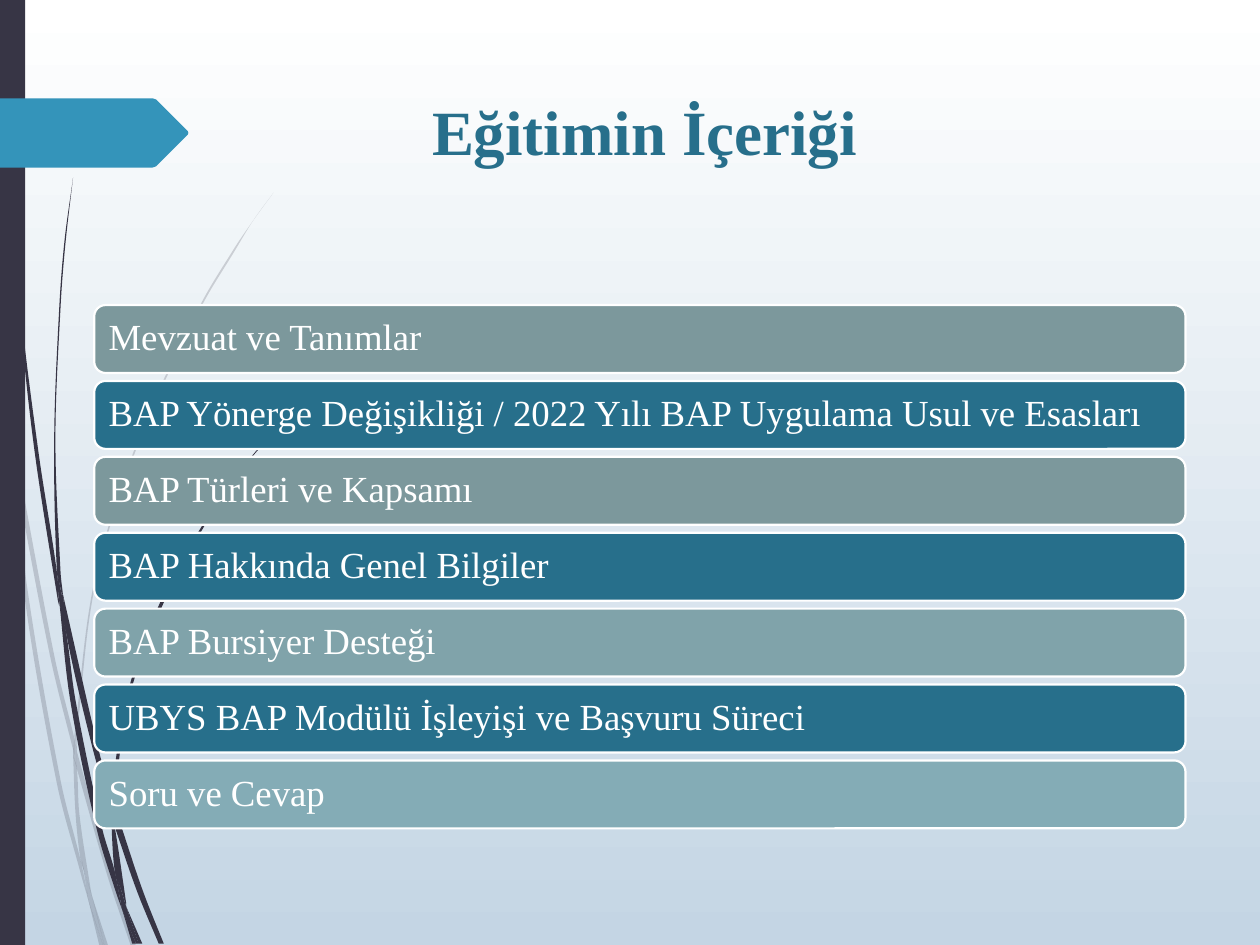
from dataclasses import dataclass
from math import dist

from lxml import etree
from pptx import Presentation
from pptx.dml.color import RGBColor
from pptx.enum.shapes import MSO_SHAPE
from pptx.enum.text import MSO_ANCHOR, PP_ALIGN
from pptx.oxml.ns import qn
from pptx.util import Cm, Pt

RECTANGLE = MSO_SHAPE.RECTANGLE
ROUNDED = MSO_SHAPE.ROUNDED_RECTANGLE
MIDDLE = MSO_ANCHOR.MIDDLE
LEFT = PP_ALIGN.LEFT
CENTER = PP_ALIGN.CENTER

COLORS = {
    "white": "FFFFFF", "mist": "C4D5E4", "ink": "373545",
    "tag": "3494BA", "blue": "276F8B",
    "slate": "7C989C", "sage": "80A3AA", "aqua": "84ACB6",
}
FONT = "Times New Roman"
GRID = Cm(0.0254)
DETAIL = 10
BAR_PITCH = 1.53

Points = list[tuple[float, float]]


@dataclass
class Blade:
    left: Points
    right: Points


@dataclass
class Topic:
    text: str
    color: str


PALE_BLADES = [
    Blade([(0, 299), (7, 344), (8, 350)], [(0, 282), (6, 322), (8, 350)]),
    Blade([(12, 376), (40, 522), (59, 599)], [(10, 345), (43, 520), (59, 586)]),
    Blade([(61, 610), (85, 694), (104, 751)], [(61, 596), (64, 607), (88, 692), (108, 751)]),
    Blade([(73, 711), (83, 751)], [(73, 711), (86, 751)]),
    Blade([(8, 350), (19, 470), (45, 621), (64, 693), (70, 714)],
          [(8, 350), (12, 376), (22, 469), (48, 619), (64, 683), (69, 707), (70, 714)]),
    Blade([(58, 599), (60, 646), (64, 683), (67, 692), (73, 711)],
          [(58, 599), (61, 610), (63, 646), (72, 706), (73, 711)]),
    Blade([(217, 153), (201, 175), (186, 197), (158, 244), (110, 348), (75, 461), (59, 584)],
          [(217, 153), (201, 175), (187, 198), (159, 245), (111, 349), (76, 462), (61, 584),
           (61, 596)]),
    Blade([(70, 714), (79, 751)], [(70, 714), (82, 751)]),
    Blade([(59, 586), (58, 599)], [(59, 586), (61, 596), (61, 610)]),
    Blade([(65, 683), (69, 707), (70, 714), (82, 751)],
          [(65, 683), (67, 692), (73, 711), (83, 751)]),
]
DARK_BLADES = [
    Blade([(2, 0), (3, 48), (5, 110), (14, 233), (27, 355), (46, 477), (47, 481)],
          [(3, 0), (4, 48), (6, 109), (15, 232), (30, 355), (45, 453), (47, 481)]),
    Blade([(50, 472), (53, 505), (73, 592), (88, 645)], [(50, 472), (77, 590), (88, 631)]),
    Blade([(91, 656), (109, 708), (126, 749)], [(91, 641), (94, 649), (113, 706), (130, 749)]),
    Blade([(47, 477), (56, 557), (77, 659), (92, 708), (97, 722)],
          [(47, 477), (53, 505), (60, 556), (81, 657), (91, 691), (96, 717), (97, 722)]),
    Blade([(58, 141), (51, 193), (47, 245), (43, 349), (45, 449), (49, 472)],
          [(58, 141), (52, 193), (48, 245), (44, 349), (48, 453), (50, 472)]),
    Blade([(100, 719), (110, 749)], [(100, 719), (113, 749)]),
    Blade([(45, 449), (47, 477), (53, 505)], [(45, 449), (49, 472), (50, 472), (53, 505)]),
    Blade([(215, 344), (191, 373), (168, 405), (129, 474), (101, 551), (88, 631)],
          [(216, 344), (191, 374), (169, 406), (131, 476), (103, 552), (91, 633), (91, 641)]),
    Blade([(97, 722), (105, 749)], [(97, 722), (108, 749)]),
    Blade([(88, 645), (91, 691), (96, 706), (100, 719)],
          [(88, 645), (91, 656), (100, 716), (100, 719)]),
    Blade([(91, 691), (96, 717), (97, 722), (108, 749)],
          [(91, 691), (96, 706), (100, 719), (110, 749)]),
]
TAG = [(0, 78), (121, 78), (124, 79), (149, 104), (149.5, 105.5), (149, 107),
       (124, 132), (121, 133), (0, 133)]
TOPICS = [
    Topic("Mevzuat ve Tanımlar", "slate"),
    Topic("BAP Yönerge Değişikliği / 2022 Yılı BAP Uygulama Usul ve Esasları", "blue"),
    Topic("BAP Türleri ve Kapsamı", "slate"),
    Topic("BAP Hakkında Genel Bilgiler", "blue"),
    Topic("BAP Bursiyer Desteği", "sage"),
    Topic("UBYS BAP Modülü İşleyişi ve Başvuru Süreci", "blue"),
    Topic("Soru ve Cevap", "aqua"),
]


def rgb(name: str) -> RGBColor:
    return RGBColor.from_string(COLORS[name])


def apply(target, values: dict) -> None:
    for name, value in values.items():
        setattr(target, name, value)


def paint(shape, color: str) -> None:
    shape.shadow.inherit = False
    shape.fill.solid()
    shape.fill.fore_color.rgb = rgb(color)
    shape.line.fill.background()


def draw_outline(page, points: Points, color: str):
    corners = [(x * DETAIL, y * DETAIL) for x, y in points]
    builder = page.shapes.build_freeform(*corners[0], scale=GRID / DETAIL)
    builder.add_line_segments(corners[1:], close=True)
    shape = builder.convert_to_shape()
    paint(shape, color)
    return shape


def curve_controls(side: Points) -> list[Points]:
    padded = [side[0], *side, side[-1]]
    slopes = [tuple((b - a) / dist(before, after) for a, b in zip(before, after))
              for before, after in zip(padded, padded[2:])]
    controls = []
    for start, end, leaving, arriving in zip(side, side[1:], slopes, slopes[1:]):
        reach = dist(start, end) / 3
        controls.append([tuple(a + s * reach for a, s in zip(start, leaving)),
                         tuple(b - s * reach for b, s in zip(end, arriving))])
    return controls


def draw_blade(page, blade: Blade, opacity: int) -> None:
    back = blade.right[::-1]
    nodes = blade.left + back
    shape = draw_outline(page, nodes, "ink")
    controls = [*curve_controls(blade.left), [], *curve_controls(back)]
    left, top = min(x for x, y in nodes), min(y for x, y in nodes)
    for segment, handles in zip(list(shape.element.iter(qn("a:lnTo"))), controls):
        if handles:
            segment.tag = qn("a:cubicBezTo")
        for index, (x, y) in enumerate(handles):
            point = etree.Element(qn("a:pt"), x=str(round((x - left) * DETAIL)),
                                  y=str(round((y - top) * DETAIL)))
            segment.insert(index, point)
    if opacity < 100:
        color = next(shape.element.spPr.iter(qn("a:srgbClr")))
        etree.SubElement(color, qn("a:alpha"), val=str(opacity * 1000))


def write(shape, text: str, align, frame_format: dict, font_format: dict, color: str) -> None:
    apply(shape.text_frame, {"word_wrap": True, "vertical_anchor": MIDDLE, **frame_format})
    para = shape.text_frame.paragraphs[0]
    apply(para, {"alignment": align, "line_spacing": 0.9})
    span = para.add_run()
    span.text = text
    apply(span.font, {"name": FONT, **font_format})
    span.font.color.rgb = rgb(color)


def draw_topic(page, topic: Topic, row: int) -> None:
    drop = row * BAR_PITCH
    bar = page.shapes.add_shape(ROUNDED, Cm(1.9), Cm(6.15 + drop), Cm(22), Cm(1.37))
    paint(bar, topic.color)
    bar.line.color.rgb = rgb("white")
    bar.line.width = Pt(1.25)
    box = page.shapes.add_textbox(Cm(1.96), Cm(6.22 + drop), Cm(21.87), Cm(1.22))
    sides = ("left", "right", "top", "bottom")
    margins = {f"margin_{side}": Cm(0.23) for side in sides}
    write(box, topic.text, LEFT, margins, {"size": Pt(21)}, "white")


def draw_background(page) -> None:
    fill = page.background.fill
    fill.gradient()
    fill.gradient_angle = 270
    for stop, position, color in zip(fill.gradient_stops, (0, 1), ("white", "mist")):
        stop.position = position
        stop.color.rgb = rgb(color)


def main() -> None:
    deck = Presentation()
    apply(deck, {"slide_width": Cm(25.4), "slide_height": Cm(19.05)})
    page = deck.slides.add_slide(deck.slide_layouts[5])
    draw_background(page)
    for blades, opacity in ((PALE_BLADES, 20), (DARK_BLADES, 100)):
        for blade in blades:
            draw_blade(page, blade, opacity)
    paint(page.shapes.add_shape(RECTANGLE, 0, 0, Cm(0.51), deck.slide_height), "ink")
    draw_outline(page, TAG, "tag")
    title = page.shapes.title
    apply(title, {"left": Cm(2.9), "top": Cm(1.73), "width": Cm(20.19), "height": Cm(1.98)})
    write(title, "Eğitimin İçeriği", CENTER, {}, {"size": Pt(36), "bold": True}, "blue")
    for row, topic in enumerate(TOPICS):
        draw_topic(page, topic, row)
    deck.save("out.pptx")


if __name__ == "__main__":
    main()
